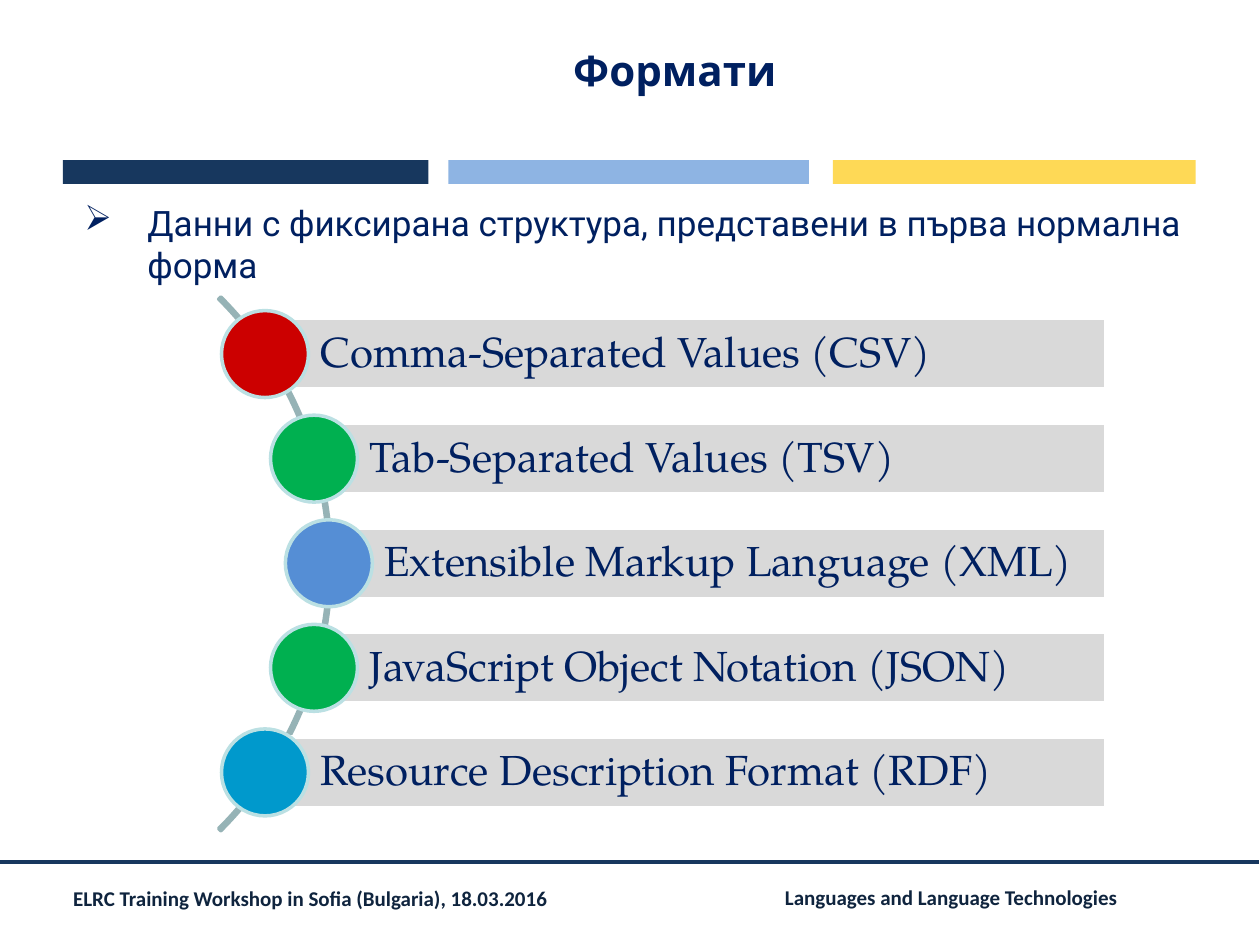
from dataclasses import dataclass
from math import sqrt

from lxml import etree
from pptx import Presentation
from pptx.dml.color import RGBColor
from pptx.enum.shapes import MSO_CONNECTOR, MSO_SHAPE
from pptx.enum.text import MSO_ANCHOR, PP_ALIGN
from pptx.oxml.ns import qn
from pptx.util import Inches, Pt

RECTANGLE, CIRCLE, ARC = MSO_SHAPE.RECTANGLE, MSO_SHAPE.OVAL, MSO_SHAPE.BLOCK_ARC
STRAIGHT = MSO_CONNECTOR.STRAIGHT
TOP, MIDDLE = MSO_ANCHOR.TOP, MSO_ANCHOR.MIDDLE
LEFT, CENTER = PP_ALIGN.LEFT, PP_ALIGN.CENTER


@dataclass(frozen=True)
class TextStyle:
    font: str
    size: int
    color: str
    bold: bool = False
    line_spacing: float = 1.0


@dataclass(frozen=True)
class Theme:
    navy: str = "17375E"
    light_blue: str = "8EB4E3"
    yellow: str = "FED956"
    bar: str = "D9D9D9"
    bar_border: str = "FFFFFF"
    arc: str = "96B3B6"
    circle_border: str = "BBE0E3"
    outline: float = 2
    rule: float = 2.25
    title: TextStyle = TextStyle("Comic Neue", 24, "002060", True)
    body: TextStyle = TextStyle("Roboto", 20, "002060")
    item: TextStyle = TextStyle("TeX Gyre Pagella", 24, "002060", line_spacing=0.9)
    footer: TextStyle = TextStyle("Calibri", 12, "0F243E", True, 0.9)


class SlideBuilder:
    def __init__(self, slide, theme):
        self.slide = slide
        self.theme = theme

    def shape(self, kind, box, fill=None, border=None):
        shape = self.slide.shapes.add_shape(kind, *map(Inches, box))
        shape.shadow.inherit = False
        if fill:
            shape.fill.solid()
            shape.fill.fore_color.rgb = RGBColor.from_string(fill)
        else:
            shape.fill.background()
        if border:
            shape.line.color.rgb = RGBColor.from_string(border)
            shape.line.width = Pt(self.theme.outline)
        else:
            shape.line.fill.background()
        return shape

    def set_text(self, shape, text, style, insets, anchor=TOP, align=LEFT, bullet=None):
        """Fill a shape with one paragraph; insets run left, top, right, bottom."""
        frame = shape.text_frame
        frame.word_wrap = True
        frame.vertical_anchor = anchor
        (frame.margin_left, frame.margin_top,
         frame.margin_right, frame.margin_bottom) = map(Inches, insets)
        paragraph = frame.paragraphs[0]
        paragraph.text = text
        paragraph.alignment = align
        paragraph.line_spacing = style.line_spacing
        if bullet:
            properties = paragraph._p.get_or_add_pPr()
            properties.set("marL", str(Inches(0.5)))
            properties.set("indent", str(Inches(-0.5)))
            etree.SubElement(properties, qn("a:buChar")).set("char", bullet)
        font = paragraph.font
        font.name, font.size, font.bold = style.font, Pt(style.size), style.bold
        font.color.rgb = RGBColor.from_string(style.color)

    def text(self, box, text, style, insets, **layout):
        text_box = self.slide.shapes.add_textbox(*map(Inches, box))
        self.set_text(text_box, text, style, insets, **layout)

    def rule(self, start, end, color):
        line = self.slide.shapes.add_connector(STRAIGHT, *map(Inches, start + end))
        line.line.color.rgb = RGBColor.from_string(color)
        line.line.width = Pt(self.theme.rule)
        etree.SubElement(line._element.spPr, qn("a:effectLst"))

    def arc(self, box, adjustments):
        arc = self.shape(ARC, box, border=self.theme.arc)
        for index, value in enumerate(adjustments):
            arc.adjustments[index] = value

    def format_item(self, center_x, center_y, right, text, color):
        """A grey bar that starts under the centre of its circle."""
        height, diameter = 0.56, 0.69
        bar = self.shape(
            RECTANGLE,
            (center_x, center_y - height / 2, right - center_x, height),
            self.theme.bar, self.theme.bar_border)
        self.set_text(bar, text, self.theme.item, (0.44, 0.07, 0.07, 0.07), anchor=MIDDLE)
        self.shape(
            CIRCLE,
            (center_x - diameter / 2, center_y - diameter / 2, diameter, diameter),
            color, self.theme.circle_border)


def main():
    presentation = Presentation()
    presentation.slide_width, presentation.slide_height = Inches(10), Inches(7.5)
    theme = Theme()
    slide = presentation.slides.add_slide(presentation.slide_layouts[6])
    builder = SlideBuilder(slide, theme)

    for left, width, color in ((0.5, 2.9, theme.navy),
                               (3.56, 2.86, theme.light_blue),
                               (6.61, 2.88, theme.yellow)):
        builder.shape(RECTANGLE, (left, 1.27, width, 0.19), color)

    footer_insets = (0.08, 0.04, 0.08, 0.04)
    builder.text((0.5, 7.01, 4.72, 0.27),
                 "ELRC Training Workshop in Sofia (Bulgaria), 18.03.2016",
                 theme.footer, footer_insets)
    builder.rule((9.99, 6.84), (-0.01, 6.84), theme.navy)
    builder.text((6.15, 7, 2.95, 0.26), "Languages and Language Technologies",
                 theme.footer, footer_insets)

    builder.text((0.67, 1.55, 9.16, 5.34),
                 "Данни с фиксирана структура, представени в първа нормална форма",
                 theme.body, (0, 0.05, 0, 0.05), bullet="➢")
    builder.text((1.75, 0.09, 7.33, 0.93), "Формати ", theme.title,
                 (0, 0, 0, 0), anchor=MIDDLE, align=CENTER)

    builder.arc((-3.36, 1.48, 5.99, 5.99), (189, 27, 0.004))
    formats = (
        ("Comma-Separated Values (CSV)", "CC0000"),
        ("Tab-Separated Values (TSV)", "00B050"),
        ("Extensible Markup Language (XML)", "558ED5"),
        ("JavaScript Object Notation (JSON)", "00B050"),
        ("Resource Description Format (RDF)", "0099CC"),
    )
    # Circle centres lie on the arc, at equal vertical steps around its middle.
    arc_x, arc_y, radius, step = -0.36, 4.47, 2.97, 0.83
    for index, (name, color) in enumerate(formats):
        offset = (index - len(formats) // 2) * step
        builder.format_item(arc_x + sqrt(radius ** 2 - offset ** 2),
                            arc_y + offset, 8.78, name, color)

    presentation.save("out.pptx")


if __name__ == "__main__":
    main()
